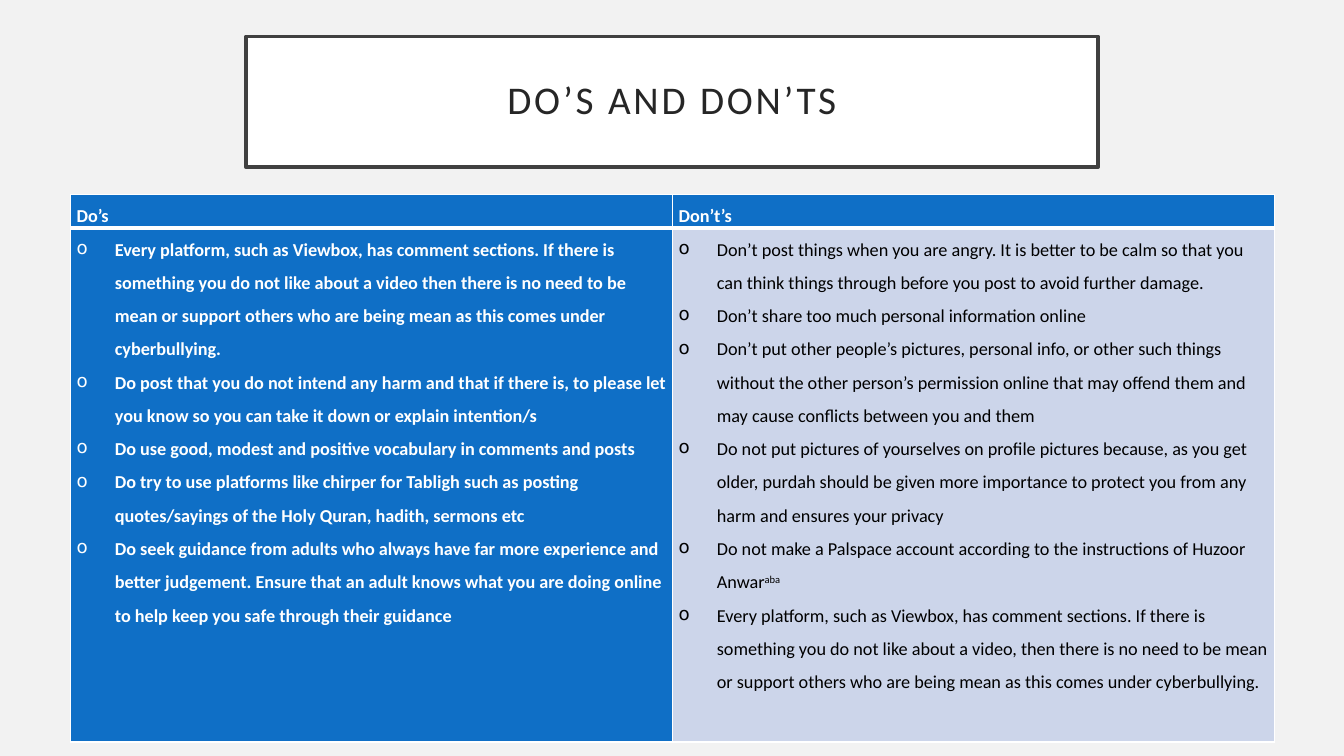
from lxml.etree import SubElement
from pptx import Presentation
from pptx.dml.color import RGBColor
from pptx.enum.shapes import MSO_SHAPE
from pptx.enum.text import MSO_ANCHOR, PP_ALIGN
from pptx.oxml.ns import qn
from pptx.util import Inches, Pt

WIDTH, HEIGHT = 13.33, 7.5
COLUMN, ROW = WIDTH / 100, HEIGHT / 100
COLORS = {
    "page": "F2F2F2", "white": "FFFFFF", "frame": "404040",
    "title": "262626", "blue": "0F6FC6", "pale": "CCD5EA", "black": "000000",
}
TITLE_BOX = (18.3, 4.8, 63.4, 17.33)
TABLE_BOX = (5.25, 25.73, 89.58, 71.73)
COLUMN_SHARES = (0.5, 0.5)
HEADER_ROWS = 3.73
HANGING = 0.38

DOS = [
    "Every platform, such as Viewbox, has comment sections. If there is something you do not like "
    "about a video then there is no need to be mean or support others who are being mean as this "
    "comes under cyberbullying.",
    "Do post that you do not intend any harm and that if there is, to please let you know so you "
    "can take it down or explain intention/s",
    "Do use good, modest and positive vocabulary in comments and posts",
    "Do try to use platforms like chirper for Tabligh such as posting quotes/sayings of the Holy "
    "Quran, hadith, sermons etc",
    "Do seek guidance from adults who always have far more experience and better judgement. Ensure "
    "that an adult knows what you are doing online to help keep you safe through their guidance",
]
DONTS = [
    "Don’t post things when you are angry. It is better to be calm so that you can think things "
    "through before you post to avoid further damage.",
    "Don’t share too much personal information online",
    "Don’t put other people’s pictures, personal info, or other such things without the other "
    "person’s permission online that may offend them and may cause conflicts between you and them",
    "Do not put pictures of yourselves on profile pictures because, as you get older, purdah "
    "should be given more importance to protect you from any harm and ensures your privacy",
    ("Do not make a Palspace account according to the instructions of Huzoor Anwar", "aba"),
    "Every platform, such as Viewbox, has comment sections. If there is something you do not like "
    "about a video, then there is no need to be mean or support others who are being mean as this "
    "comes under cyberbullying.",
]


def color(name):
    """Return the named colour."""
    return RGBColor.from_string(COLORS[name])


def place(box):
    """Turn a box in grid columns and rows into lengths."""
    left, top, width, height = box
    return [Inches(size) for size in (left * COLUMN, top * ROW, width * COLUMN, height * ROW)]


def apply(target, values):
    """Set each value as an attribute of the target."""
    for name, value in values.items():
        setattr(target, name, value)


def add_span(para, text, ink, size, bold=False):
    """Add a span of text to a paragraph and return it."""
    span = para.add_run()
    apply(span, {"text": text})
    apply(span.font, {"name": "Calibri", "size": Pt(size), "bold": bold})
    span.font.color.rgb = color(ink)
    return span


def add_bullet(para):
    """Give a paragraph a hanging round bullet."""
    properties = para._p.get_or_add_pPr()
    properties.set("marL", str(Inches(HANGING)))
    properties.set("indent", str(-Inches(HANGING)))
    SubElement(properties, qn("a:buChar"), char="o")


def add_borders(cell, widths):
    """Draw white borders of the given widths on a cell."""
    properties = cell._tc.get_or_add_tcPr()
    for side, width in widths.items():
        line = SubElement(properties, qn(f"a:ln{side}"), w=str(Pt(width)))
        fill = SubElement(line, qn("a:solidFill"))
        SubElement(fill, qn("a:srgbClr"), val=COLORS["white"])


def add_title(page, box, text):
    """Draw the framed title."""
    frame = page.shapes.add_shape(MSO_SHAPE.RECTANGLE, *place(box))
    frame.shadow.inherit = False
    frame.fill.solid()
    frame.fill.fore_color.rgb = color("white")
    frame.line.color.rgb = color("frame")
    frame.line.width = Pt(2.5)
    margins = {f"margin_{side}": Inches(0.2) for side in ("left", "top", "right", "bottom")}
    apply(frame.text_frame,
          {"word_wrap": True, "vertical_anchor": MSO_ANCHOR.MIDDLE, **margins})
    para = frame.text_frame.paragraphs[0]
    apply(para, {"alignment": PP_ALIGN.CENTER, "line_spacing": 0.9})
    span = add_span(para, text, "title", 28)
    span.font._element.set("spc", "200")


def fill_cell(cell, items, back, ink, bold, bullets, borders):
    """Format a cell and write one paragraph for each item."""
    apply(cell, {"margin_left": Inches(0.06), "margin_right": Inches(0.06),
                 "margin_top": 0, "margin_bottom": 0})
    add_borders(cell, borders)
    cell.fill.solid()
    cell.fill.fore_color.rgb = color(back)
    for index, item in enumerate(items):
        para = cell.text_frame.add_paragraph() if index else cell.text_frame.paragraphs[0]
        apply(para, {"line_spacing": 1.5, "space_after": Pt(0)})
        if bullets:
            add_bullet(para)
        text, *raised = [item] if isinstance(item, str) else item
        add_span(para, text, ink, 13, bold)
        for mark in raised:
            span = add_span(para, mark, ink, 13, bold)
            span.font._element.set("baseline", "30000")


def add_advice(page, box, lists):
    """Draw the table of advice with one column for each list."""
    left, top, width, height = place(box)
    table = page.shapes.add_table(2, len(lists), left, top, width, height).table
    for column, share in zip(table.columns, COLUMN_SHARES):
        column.width = int(width * share)
    for row, rows in zip(table.rows, (HEADER_ROWS, box[3] - HEADER_ROWS)):
        row.height = Inches(rows * ROW)
    for index, (heading, items, back, ink, bold) in enumerate(lists):
        fill_cell(table.cell(0, index), [heading], "blue", "white", True, False,
                  {"L": 1, "R": 1, "T": 1, "B": 3})
        fill_cell(table.cell(1, index), items, back, ink, bold, True,
                  {"L": 1, "R": 1, "T": 3, "B": 1})


def main():
    """Build the deck and save it."""
    deck = Presentation()
    apply(deck, {"slide_width": Inches(WIDTH), "slide_height": Inches(HEIGHT)})
    page = deck.slides.add_slide(deck.slide_layouts[6])
    page.background.fill.solid()
    page.background.fill.fore_color.rgb = color("page")
    add_title(page, TITLE_BOX, "DO’S AND DON’TS")
    add_advice(page, TABLE_BOX, [
        ("Do’s", DOS, "blue", "white", True),
        ("Don’t’s", DONTS, "pale", "black", False),
    ])
    deck.save("out.pptx")


if __name__ == "__main__":
    main()
